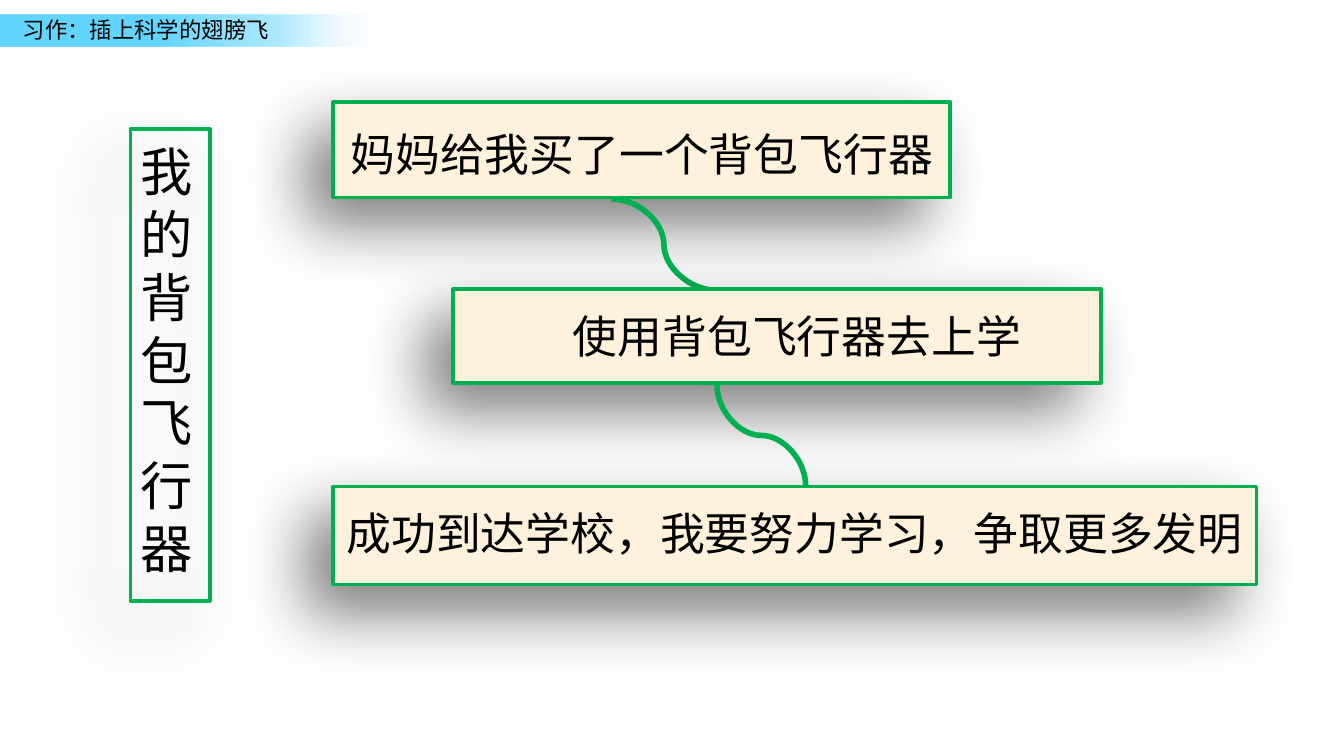
from dataclasses import dataclass

from lxml.etree import SubElement
from pptx import Presentation
from pptx.dml.color import RGBColor
from pptx.enum.shapes import MSO_CONNECTOR, MSO_SHAPE
from pptx.enum.text import MSO_AUTO_SIZE, PP_ALIGN
from pptx.oxml.ns import qn
from pptx.util import Inches, Pt

FONT = "Noto Sans CJK SC"
GREEN = "00B050"
CREAM = "FFF2DD"
BLACK = "000000"


@dataclass
class Rect:
    left: float
    top: float
    width: float
    height: float

    def emu(self) -> tuple:
        return tuple(Inches(v) for v in (self.left, self.top, self.width, self.height))


@dataclass
class Card:
    frame: Rect
    label: Rect
    text: str
    size: int = 24
    fill: str | None = CREAM
    align: PP_ALIGN = PP_ALIGN.LEFT


@dataclass
class Curve:
    start: tuple[float, float]
    end: tuple[float, float]
    rotation: int = 0


def rgb(color: str) -> RGBColor:
    return RGBColor.from_string(color)


def add_color(parent, color: str, opacity: int) -> None:
    clr = SubElement(parent, qn("a:srgbClr"), val=color)
    if opacity < 100:
        SubElement(clr, qn("a:alpha"), val=str(opacity * 1000))


def add_text(slide, box: Rect, text: str, size: int,
             align: PP_ALIGN = PP_ALIGN.LEFT, wrap: bool = True) -> None:
    tf = slide.shapes.add_textbox(*box.emu()).text_frame
    tf.word_wrap = wrap
    tf.auto_size = MSO_AUTO_SIZE.SHAPE_TO_FIT_TEXT
    p = tf.paragraphs[0]
    r = p.add_run()
    r.text = text
    p.alignment = align
    p.font.size = Pt(size)
    p.font.name = FONT
    p.font.color.rgb = rgb(BLACK)
    # East Asian text takes its font from a:ea
    SubElement(r._r.get_or_add_rPr(), qn("a:ea"), typeface=FONT)


def add_banner(slide, box: Rect, stops: list[tuple[int, str, int]]) -> None:
    sp = slide.shapes.add_shape(MSO_SHAPE.RECTANGLE, *box.emu())
    sp.shadow.inherit = False
    sp.line.fill.background()
    sp.fill.gradient()
    sp.fill.gradient_angle = 0
    gs_list = sp._element.spPr.find(qn("a:gradFill")).find(qn("a:gsLst"))
    for gs in list(gs_list):
        gs_list.remove(gs)
    for position, color, opacity in stops:
        gs = SubElement(gs_list, qn("a:gs"), pos=str(position * 1000))
        add_color(gs, color, opacity)


def add_card(slide, card: Card) -> None:
    sp = slide.shapes.add_shape(MSO_SHAPE.RECTANGLE, *card.frame.emu())
    if card.fill:
        sp.fill.solid()
        sp.fill.fore_color.rgb = rgb(card.fill)
    else:
        sp.fill.background()
    sp.line.color.rgb = rgb(GREEN)
    sp.line.width = Pt(2)
    # Soft shadow towards the lower left
    sp.shadow.inherit = False
    effects = sp._element.spPr.find(qn("a:effectLst"))
    shadow = SubElement(effects, qn("a:outerShdw"), blurRad=str(Pt(35)), dist=str(Pt(20)),
                        dir=str(135 * 60000), algn="tr", rotWithShape="0")
    add_color(shadow, BLACK, 50)
    add_text(slide, card.label, card.text, card.size, card.align)


def add_curve(slide, curve: Curve) -> None:
    points = [Inches(v) for v in (*curve.start, *curve.end)]
    cxn = slide.shapes.add_connector(MSO_CONNECTOR.CURVE, *points)
    cxn.line.color.rgb = rgb(GREEN)
    cxn.line.width = Pt(3)
    sp_pr = cxn._element.spPr
    SubElement(sp_pr, qn("a:effectLst"))
    if curve.rotation:
        sp_pr.find(qn("a:xfrm")).set("rot", str(curve.rotation * 60000))


BANNER_STOPS = [(40, "63D6FF", 100), (70, "97E4FF", 76), (97, "FFFFFF", 0)]

CARDS = [
    Card(Rect(0.97, 0.96, 0.59, 3.51), Rect(0.95, 0.99, 0.66, 1.51),
         "我的背包飞行器", size=28, fill=None),
    Card(Rect(2.48, 0.76, 4.59, 0.71), Rect(2.51, 0.89, 4.79, 0.91),
         "妈妈给我买了一个背包飞行器"),
    Card(Rect(2.48, 3.62, 6.87, 0.73), Rect(2.48, 3.71, 7.03, 0.91),
         "成功到达学校，我要努力学习，争取更多发明"),
]
MIDDLE_CARD = Card(Rect(3.37, 2.15, 4.82, 0.7), Rect(3.37, 2.25, 5.12, 0.5),
                   "使用背包飞行器去上学", align=PP_ALIGN.CENTER)

UPPER_CURVE = Curve((4.55, 1.48), (5.33, 2.16))
# Given before its quarter turn, which makes it leave and arrive vertically
LOWER_CURVE = Curve((6.04, 2.91), (5.29, 3.57), rotation=270)


def main() -> None:
    prs = Presentation()
    # Widescreen, 16:9
    prs.slide_width = Inches(10)
    prs.slide_height = prs.slide_width * 9 // 16
    slide = prs.slides.add_slide(prs.slide_layouts[6])

    # Header
    add_banner(slide, Rect(-0.03, 0.11, 3.03, 0.24), BANNER_STOPS)
    add_text(slide, Rect(0.07, 0.07, 2.05, 0.3), "习作：插上科学的翅膀飞", 12, wrap=False)

    # Story outline; the middle card covers the end of the upper curve
    for card in CARDS:
        add_card(slide, card)
    add_curve(slide, UPPER_CURVE)
    add_card(slide, MIDDLE_CARD)
    add_curve(slide, LOWER_CURVE)

    prs.save("out.pptx")


if __name__ == "__main__":
    main()
